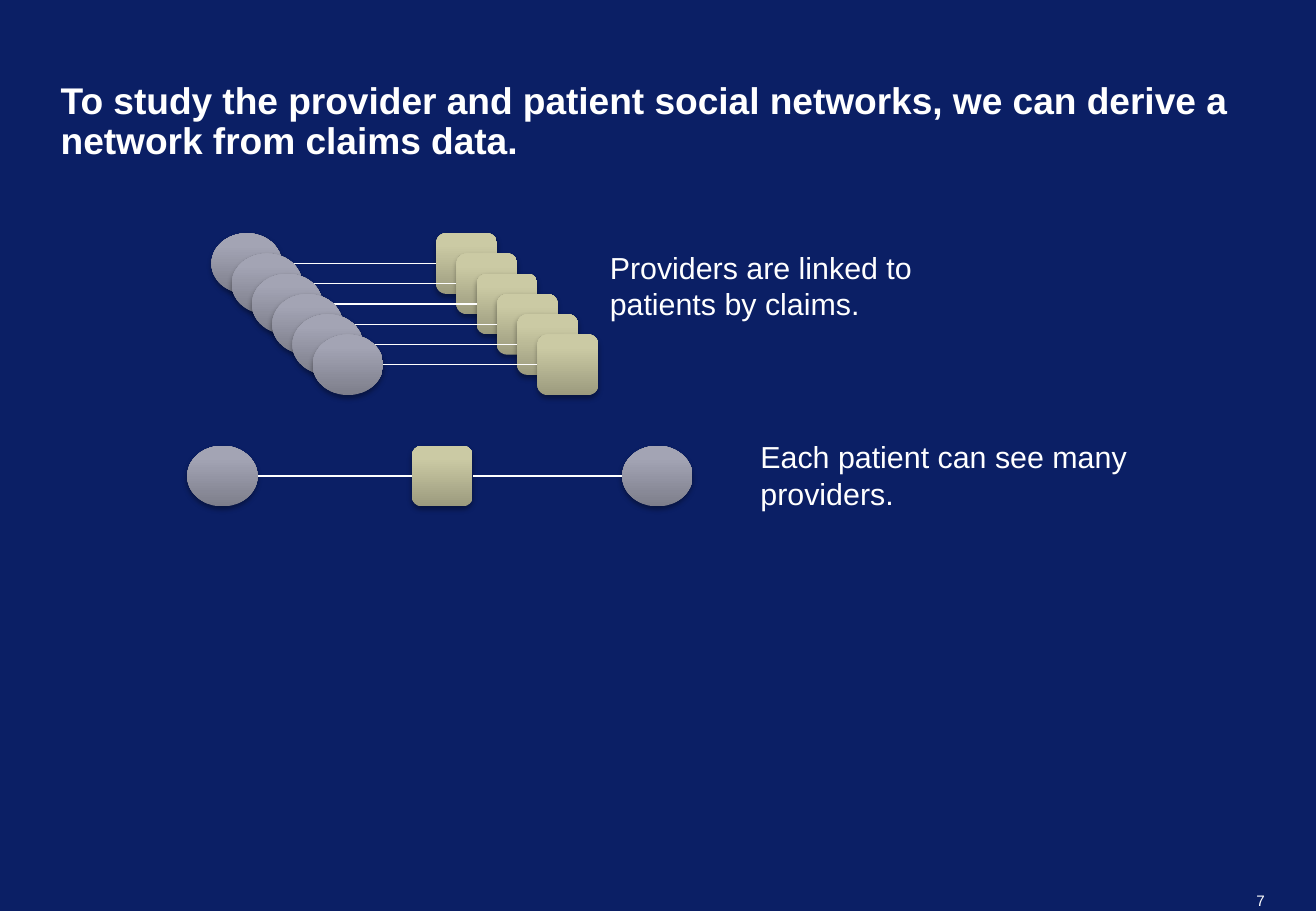
from dataclasses import dataclass

from lxml.etree import SubElement
from pptx import Presentation
from pptx.dml.color import RGBColor
from pptx.enum.shapes import MSO_CONNECTOR, MSO_SHAPE
from pptx.enum.text import MSO_ANCHOR, PP_ALIGN
from pptx.oxml.ns import qn
from pptx.util import Inches, Pt


@dataclass(frozen=True)
class Theme:
    font: str = "Arial"
    background: str = "0B1F65"
    ink: str = "FFFFFF"
    shadow: str = "000000"
    provider: tuple = ((0, "7D7E8B"), (80, "A3A4B4"), (100, "A3A4B6"))
    patient: tuple = ((0, "9C9B7E"), (80, "CBCAA4"), (100, "CDCCA4"))
    title_size: int = 22
    body_size: int = 18
    number_size: int = 9
    claim_width: float = 0.75


THEME = Theme()
PROVIDER_WIDTH, NODE_HEIGHT, PATIENT_WIDTH = 0.58, 0.5, 0.5
PATIENT_OFFSET = 1.85
CLAIM_COUNT, CLAIM_STEP = 6, 1 / 6


def add_text(slide, text, box, *, size=THEME.body_size, bold=False, inset=None,
             anchor=MSO_ANCHOR.TOP, align=PP_ALIGN.LEFT, spacing=None, wrap=True):
    frame = slide.shapes.add_textbox(*map(Inches, box)).text_frame
    frame.word_wrap = wrap
    frame.vertical_anchor = anchor
    if inset is not None:
        frame.margin_left = frame.margin_right = Inches(inset)
        frame.margin_top = frame.margin_bottom = Inches(inset)
    paragraph = frame.paragraphs[0]
    paragraph.alignment = align
    paragraph.line_spacing = spacing
    run = paragraph.add_run()
    run.text = text
    run.font.name, run.font.size, run.font.bold = THEME.font, Pt(size), bold
    run.font.color.rgb = RGBColor.from_string(THEME.ink)


def add_color(parent, color, alpha=None):
    rgb = SubElement(parent, qn("a:srgbClr"), val=color)
    if alpha is not None:
        SubElement(rgb, qn("a:alpha"), val=str(alpha * 1000))


def add_node(slide, preset, stops, left, top, width):
    """Add a shape with an upward gradient and a soft shadow below."""
    node = slide.shapes.add_shape(
        preset, Inches(left), Inches(top), Inches(width), Inches(NODE_HEIGHT))
    node.line.fill.background()
    node.fill.gradient()
    properties = node._element.spPr
    gradient = properties.find(qn("a:gradFill"))
    for child in list(gradient):
        gradient.remove(child)
    stop_list = SubElement(gradient, qn("a:gsLst"))
    for position, color in stops:
        add_color(SubElement(stop_list, qn("a:gs"), pos=str(position * 1000)), color)
    SubElement(gradient, qn("a:lin"), ang=str(270 * 60000), scaled="0")
    node.shadow.inherit = False
    shadow = SubElement(
        properties.find(qn("a:effectLst")), qn("a:outerShdw"),
        blurRad=str(Pt(3.1)), dist=str(Pt(1.8)), dir=str(90 * 60000), rotWithShape="0")
    add_color(shadow, THEME.shadow, alpha=35)
    return node


def add_provider(slide, left, top):
    return add_node(slide, MSO_SHAPE.OVAL, THEME.provider, left, top, PROVIDER_WIDTH)


def add_claim(slide, provider, patient, patient_side):
    """Link a provider to side 1 (left) or 3 (right) of a patient."""
    start = provider.left + (provider.width if patient_side == 1 else 0)
    middle = provider.top + provider.height // 2
    claim = slide.shapes.add_connector(
        MSO_CONNECTOR.STRAIGHT, start, middle, patient.left, middle)
    claim.end_connect(patient, patient_side)
    claim.line.width = Pt(THEME.claim_width)
    claim.line.color.rgb = RGBColor.from_string(THEME.ink)
    SubElement(claim._element.spPr, qn("a:effectLst"))


def add_linked_pair(slide, left, top):
    provider = add_provider(slide, left, top)
    patient = add_node(slide, MSO_SHAPE.ROUNDED_RECTANGLE, THEME.patient,
                       left + PATIENT_OFFSET, top, PATIENT_WIDTH)
    add_claim(slide, provider, patient, 1)
    return patient


def add_claims_stack(slide, left, top):
    for index in range(CLAIM_COUNT):
        shift = index * CLAIM_STEP
        add_linked_pair(slide, left + shift, top + shift)
    add_text(slide, "Providers are linked to patients by claims.",
             (left + 3.18, top + 0.08, 3.5, 0.71))


def add_shared_patient(slide, left, top):
    patient = add_linked_pair(slide, left, top)
    second_provider = add_provider(slide, left + 3.58, top)
    add_claim(slide, second_provider, patient, 3)
    add_text(slide, "Each patient can see many providers.",
             (left + 4.62, top - 0.11, 3.5, 0.71))


def main():
    deck = Presentation()
    deck.slide_width, deck.slide_height = Inches(10.83), Inches(7.5)
    slide = deck.slides.add_slide(deck.slide_layouts[6])
    slide.background.fill.solid()
    slide.background.fill.fore_color.rgb = RGBColor.from_string(THEME.background)

    add_text(slide, "7", (10.26, 7.34, 0.15, 0.15), size=THEME.number_size,
             inset=0, align=PP_ALIGN.RIGHT, wrap=False)
    add_text(slide, "To study the provider and patient social networks, "
             "we can derive a network from claims data.",
             (0.5, 0.42, 9.83, 0.92), size=THEME.title_size, bold=True,
             inset=0, anchor=MSO_ANCHOR.BOTTOM, spacing=0.9)
    add_claims_stack(slide, 1.74, 1.92)
    add_shared_patient(slide, 1.54, 3.67)
    deck.save("out.pptx")


if __name__ == "__main__":
    main()
